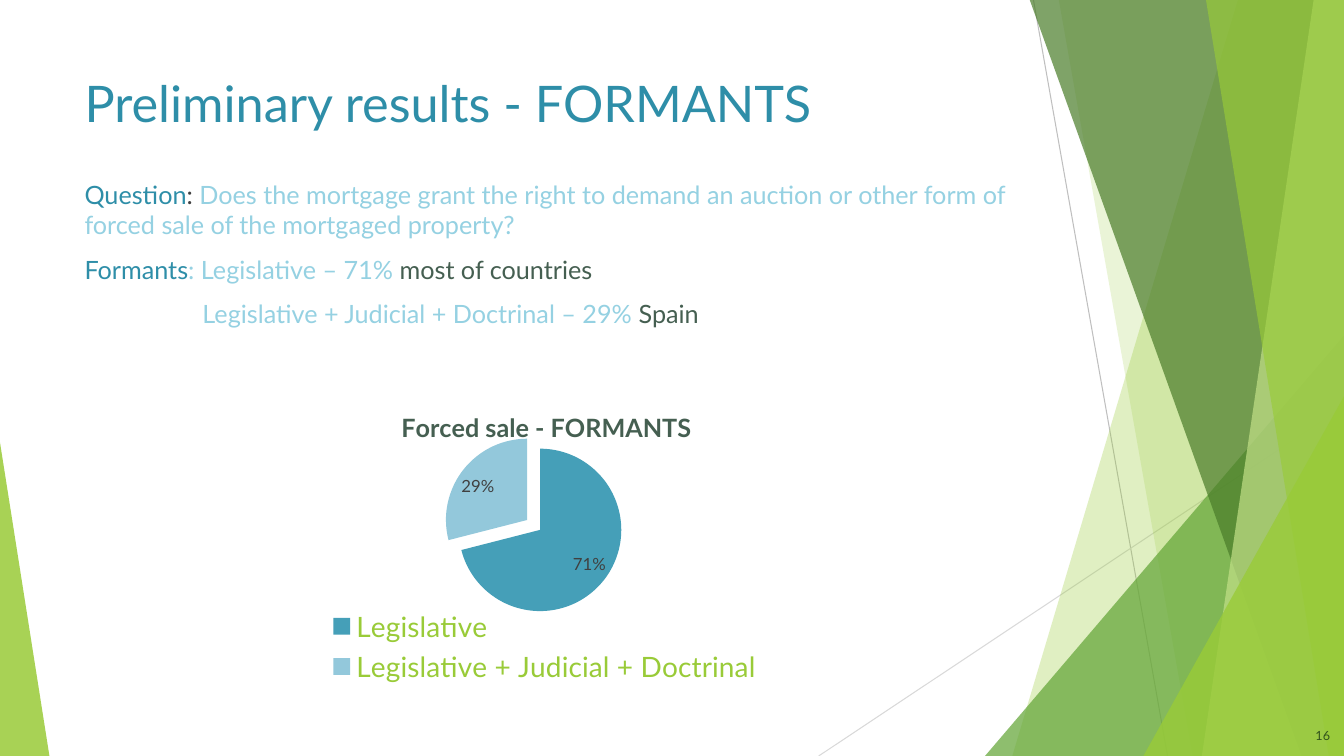
from lxml import etree
from pptx import Presentation
from pptx.chart.data import CategoryChartData
from pptx.dml.color import RGBColor
from pptx.enum.chart import XL_CHART_TYPE as ChartType
from pptx.enum.chart import XL_LABEL_POSITION as LabelPosition
from pptx.enum.chart import XL_LEGEND_POSITION as LegendPosition
from pptx.enum.shapes import MSO_CONNECTOR as Connector
from pptx.enum.shapes import MSO_SHAPE as Preset
from pptx.enum.text import MSO_ANCHOR as Anchor
from pptx.enum.text import PP_ALIGN as Align
from pptx.oxml import parse_xml
from pptx.oxml.ns import nsdecls, qn
from pptx.util import Inches, Pt

FONT = "Lato"
WIDTH, HEIGHT = 13.33, 7.5
COLORS = {
    "lime": "99CB38", "pale lime": "C2E088", "green": "63A537",
    "forest": "4A7C29", "dark green": "31521C", "moss": "455F51",
    "teal": "2E8EA8", "sky": "95D1E2", "charcoal": "404040",
    "pie teal": "459FB8", "pie sky": "93C8DB",
    "gray": "BFBFBF", "light gray": "D9D9D9",
}


def color(name):
    return RGBColor.from_string(COLORS[name])


def style_font(font, size, name, bold=False):
    font.name, font.size, font.bold = FONT, Pt(size), bold
    font.color.rgb = color(name)


def paint(shape, name, opacity):
    shape.shadow.inherit = False
    shape.line.fill.background()
    shape.fill.solid()
    shape.fill.fore_color.rgb = color(name)
    tint = shape.fill._xPr.find(qn("a:solidFill"))[0]
    etree.SubElement(tint, qn("a:alpha")).set("val", str(opacity * 1000))


def add_thin_line(page, start, end, name):
    line = page.shapes.add_connector(
        Connector.STRAIGHT, *map(Inches, start + end))
    line.line.color.rgb = color(name)
    line.line.width = Pt(0.75)
    etree.SubElement(line._element.spPr, qn("a:effectLst"))


def add_band(page, top_left, bottom_left, name, opacity):
    """Band reaching from a slanted left edge to the right side of the slide."""
    corners = [(top_left, -0.01), (WIDTH, -0.01),
               (WIDTH, HEIGHT), (bottom_left, HEIGHT)]
    points = [(Inches(x), Inches(y)) for x, y in corners]
    builder = page.shapes.build_freeform(*points[0], scale=1.0)
    builder.add_line_segments(points[1:], close=True)
    paint(builder.convert_to_shape(), name, opacity)


def add_corner(page, left, top, width, apex, name, opacity):
    """Triangle standing on the bottom edge of the slide."""
    corner = page.shapes.add_shape(
        Preset.ISOSCELES_TRIANGLE, Inches(left), Inches(top),
        Inches(width), Inches(HEIGHT - top))
    corner.adjustments[0] = apex
    paint(corner, name, opacity)


def add_facets(page):
    add_thin_line(page, (10.25, 0), (11.58, HEIGHT), "gray")
    add_thin_line(page, (WIDTH, 4.03), (8.12, HEIGHT), "light gray")
    add_band(page, 12.28, 10.04, "lime", 30)
    add_band(page, 10.5, 11.83, "lime", 20)
    add_corner(page, 9.77, 3.33, 3.56, 1, "green", 72)
    add_band(page, 10.21, 12.91, "forest", 70)
    add_band(page, 13.03, 11.92, "pale lime", 70)
    add_band(page, 11.96, 13.18, "lime", 65)
    add_corner(page, 11.34, 3.93, 1.99, 1, "lime", 80)
    add_corner(page, 0, 4.39, 0.49, 0, "lime", 85)


def add_text(page, area, paragraphs, size, align=Align.LEFT, anchor=Anchor.TOP):
    """Each paragraph is a left indent and a list of (text, color) runs."""
    box = page.shapes.add_textbox(*map(Inches, area))
    frame = box.text_frame
    frame.word_wrap = True
    frame.vertical_anchor = anchor
    for index, (indent, runs) in enumerate(paragraphs):
        para = frame.add_paragraph() if index else frame.paragraphs[0]
        para.alignment = align
        if indent:
            para._p.get_or_add_pPr().set("marL", str(Inches(indent)))
        if index:
            para.space_before = Pt(10)
        for text, name in runs:
            span = para.add_run()
            span.text = text
            style_font(span.font, size, name)


def manual_layout(x, y, width=None, height=None):
    inner = '<c:layoutTarget val="inner"/>' if width else ""
    extent = f'<c:w val="{width}"/><c:h val="{height}"/>' if width else ""
    return parse_xml(
        f'<c:layout {nsdecls("c")}><c:manualLayout>{inner}'
        '<c:xMode val="edge"/><c:yMode val="edge"/>'
        f'<c:x val="{x}"/><c:y val="{y}"/>{extent}'
        '</c:manualLayout></c:layout>')


def add_formants_chart(page, area):
    data = CategoryChartData()
    data.categories = ["Legislative", "Legislative + Judicial + Doctrinal "]
    data.add_series("Series 1", (71, 29))
    chart = page.shapes.add_chart(
        ChartType.PIE, *map(Inches, area), data).chart
    chart.font.name, chart.font.size = FONT, Pt(10)

    # Title
    chart.has_title = True
    span = chart.chart_title.text_frame.paragraphs[0].add_run()
    span.text = "Forced sale - FORMANTS"
    style_font(span.font, 18, "moss", bold=True)
    title = chart.chart_title._element
    for old in title.findall(qn("c:layout")):
        title.remove(old)
    title.find(qn("c:tx")).addnext(manual_layout(0.27, 0.05))

    # Legend
    chart.has_legend = True
    chart.legend.position = LegendPosition.BOTTOM
    chart.legend.include_in_layout = False
    style_font(chart.legend.font, 20, "lime")

    # Slices
    plot = chart.plots[0]
    plot.vary_by_categories = True
    series = plot.series[0]
    for index, name in enumerate(("pie teal", "pie sky")):
        fill = series.points[index].format.fill
        fill.solid()
        fill.fore_color.rgb = color(name)
    explosion = parse_xml(f'<c:explosion {nsdecls("c")} val="10"/>')
    series._element.find(qn("c:dPt")).addprevious(explosion)

    # Percent labels
    labels = series.data_labels
    labels.show_value = False
    labels.show_percentage = True
    labels.number_format = "0%"
    labels.number_format_is_linked = False
    labels.position = LabelPosition.BEST_FIT
    style_font(labels.font, 12, "charcoal")

    # Plot area
    plot_area = plot._element.getparent()
    for old in plot_area.findall(qn("c:layout")):
        plot_area.remove(old)
    plot_area.insert(0, manual_layout(0.002, 0.152, 0.951, 0.597))


def build_formants_slide(deck):
    page = deck.slides.add_slide(deck.slide_layouts[6])
    add_facets(page)
    add_text(page, (0.74, 0.67, 9.4, 0.75),
             [(0, [("Preliminary results - FORMANTS", "teal")])], 36)
    add_text(page, (0.74, 1.73, 9.74, 4.88), [
        (0, [("Question", "teal"), (": ", "charcoal"),
             ("Does the mortgage grant the right to demand an auction or "
              "other form of forced sale of the mortgaged property?", "sky")]),
        (0, [("Formants", "teal"), (": Legislative – 71% ", "sky"),
             ("most of countries", "moss")]),
        (1.17, [("Legislative + Judicial + Doctrinal – 29% ", "sky"),
                ("Spain", "moss")]),
    ], 18)
    add_text(page, (12.54, 7.1, 0.75, 0.4), [(0, [("16", "dark green")])],
             9, Align.RIGHT, Anchor.MIDDLE)
    add_formants_chart(page, (2.17, 3.87, 6.54, 2.97))


def main():
    deck = Presentation()
    deck.slide_width, deck.slide_height = Inches(WIDTH), Inches(HEIGHT)
    build_formants_slide(deck)
    deck.save("out.pptx")


if __name__ == "__main__":
    main()
